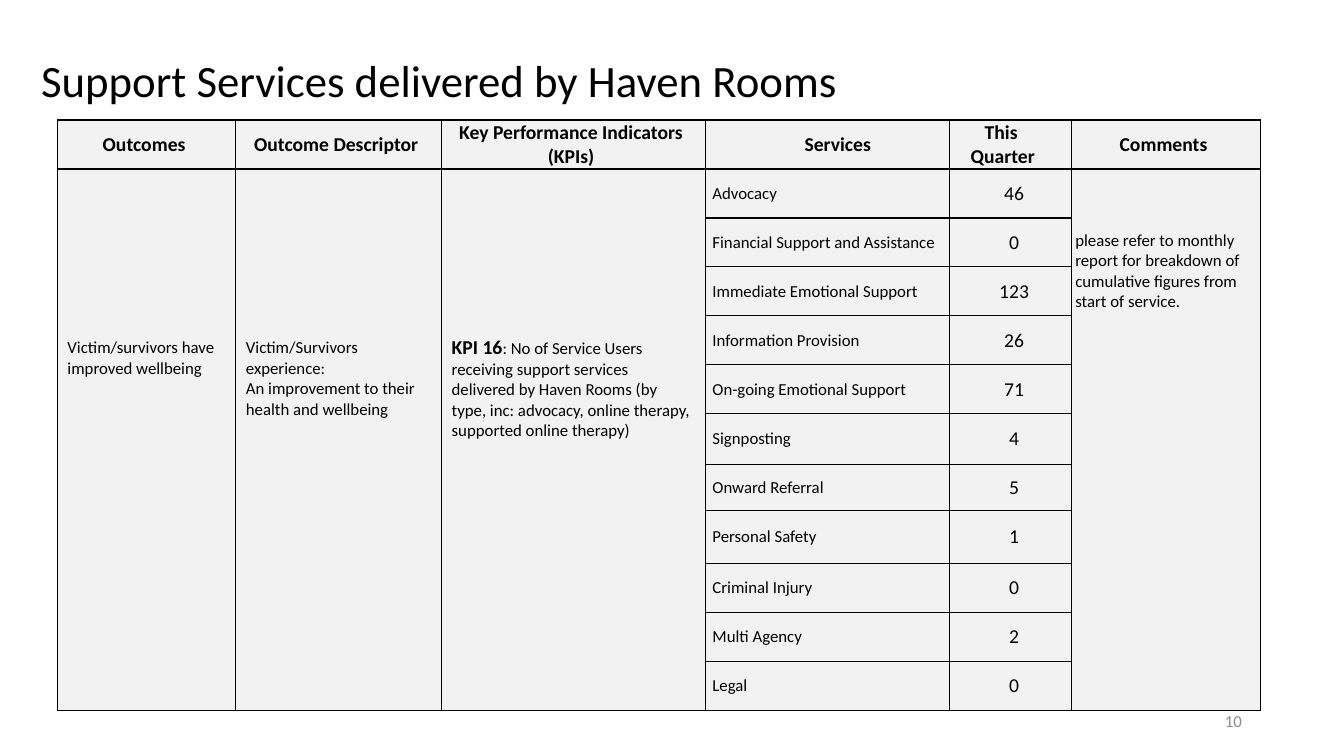
from lxml import etree
from pptx import Presentation
from pptx.dml.color import RGBColor
from pptx.enum.text import MSO_ANCHOR, PP_ALIGN
from pptx.oxml.ns import qn
from pptx.util import Pt

TOP, MIDDLE = MSO_ANCHOR.TOP, MSO_ANCHOR.MIDDLE
LEFT, CENTER, RIGHT = PP_ALIGN.LEFT, PP_ALIGN.CENTER, PP_ALIGN.RIGHT
FONT = "Calibri"
BLACK, GREY, CELL_FILL = "000000", "8C8C8C", "F2F2F2"

COL_WIDTHS = [127.5, 147, 188.5, 174.5, 87, 135]
ROW_HEIGHTS = [35] * 6 + [36, 33, 38] + [35] * 3
HEADERS = ["Outcomes", "Outcome Descriptor", "Key Performance Indicators (KPIs)",
           "Services", "This Quarter", "Comments"]
SERVICES = [
    ("Advocacy", 46),
    ("Financial Support and Assistance", 0),
    ("Immediate Emotional Support", 123),
    ("Information Provision", 26),
    ("On-going Emotional Support", 71),
    ("Signposting", 4),
    ("Onward Referral", 5),
    ("Personal Safety", 1),
    ("Criminal Injury", 0),
    ("Multi Agency", 2),
    ("Legal", 0),
]
# Column: (margins, paragraphs), each paragraph a list of (text, size, bold)
MERGED = {
    0: ((7.2, 120.8, 7.2, 3.6),
        [[("Victim/survivors have improved wellbeing", 12, False)]]),
    1: ((7.2, 120.8, 7.2, 3.6),
        [[("Victim/Survivors experience:", 12, False)],
         [("An improvement to their health and wellbeing", 12, False)]]),
    2: ((7.2, 119, 7.2, 3.6),
        [[("KPI 16", 14, True),
          (": No of Service Users receiving support services delivered by Haven "
           "Rooms (by type, inc: advocacy, online therapy, supported online "
           "therapy)", 12, False)]]),
    5: ((2.7, 44, 5, 0),
        [[(line, 12, False)] for line in (
            "please refer to monthly", "report for breakdown of",
            "cumulative figures from", "start of service.")]),
}


def rgb(color):
    return RGBColor.from_string(color)


def write(tf, paragraphs, align=LEFT, color=BLACK):
    for i, runs in enumerate(paragraphs):
        p = tf.add_paragraph() if i else tf.paragraphs[0]
        p.alignment = align
        for text, size, bold in runs:
            r = p.add_run()
            r.text = text
            r.font.name, r.font.size, r.font.bold = FONT, Pt(size), bold
            r.font.color.rgb = rgb(color)


def add_label(slide, box, text, size, align=LEFT, color=BLACK):
    tf = slide.shapes.add_textbox(*map(Pt, box)).text_frame
    tf.word_wrap = True
    tf.vertical_anchor = MIDDLE
    write(tf, [[(text, size, False)]], align, color)
    return tf


def style_cell(cell):
    """Plain fill with a thin black line on every side."""
    cell.fill.solid()
    cell.fill.fore_color.rgb = rgb(CELL_FILL)
    tcPr = cell._tc.get_or_add_tcPr()
    for i, side in enumerate(("lnL", "lnR", "lnT", "lnB")):
        ln = etree.Element(qn(f"a:{side}"), w=str(Pt(1)))
        fill = etree.SubElement(ln, qn("a:solidFill"))
        etree.SubElement(fill, qn("a:srgbClr"), val=BLACK)
        tcPr.insert(i, ln)


def fill_cell(cell, paragraphs, margins, align=LEFT, anchor=MIDDLE):
    (cell.margin_left, cell.margin_top,
     cell.margin_right, cell.margin_bottom) = map(Pt, margins)
    cell.vertical_anchor = anchor
    write(cell.text_frame, paragraphs, align)


def add_kpi_table(slide, left, top):
    table = slide.shapes.add_table(
        len(ROW_HEIGHTS), len(COL_WIDTHS), Pt(left), Pt(top),
        Pt(sum(COL_WIDTHS)), Pt(sum(ROW_HEIGHTS))).table
    for col, width in zip(table.columns, COL_WIDTHS):
        col.width = Pt(width)
    for row, height in zip(table.rows, ROW_HEIGHTS):
        row.height = Pt(height)
    for cell in table.iter_cells():
        style_cell(cell)

    for c, header in enumerate(HEADERS):
        indented = header in ("Services", "This Quarter")
        margins = (15, 0.5, 0.5, 0) if indented else (0.5, 0.5, 4, 0)
        align = LEFT if header == "This Quarter" else CENTER
        fill_cell(table.cell(0, c), [[(header, 14, True)]], margins, align)
    quarter = table.cell(0, HEADERS.index("This Quarter")).text_frame.paragraphs[0]
    quarter._p.get_or_add_pPr().set("indent", str(Pt(10)))

    for row, (service, count) in enumerate(SERVICES, 1):
        margins = (5, 0, 0, 0)
        fill_cell(table.cell(row, 3), [[(service, 12, False)]], margins)
        fill_cell(table.cell(row, 4), [[(str(count), 14, False)]], margins, CENTER)

    for c, (margins, paragraphs) in MERGED.items():
        table.cell(1, c).merge(table.cell(len(SERVICES), c))
        fill_cell(table.cell(1, c), paragraphs, margins, anchor=TOP)


def main():
    prs = Presentation()
    prs.slide_width, prs.slide_height = Pt(960), Pt(540)
    slide = prs.slides.add_slide(prs.slide_layouts[6])
    title = add_label(slide, (22.3, 33.1, 828, 52.6),
                      "Support Services delivered by Haven Rooms", 32)
    title.paragraphs[0].line_spacing = 0.9
    add_label(slide, (678.2, 500.4, 216, 28.8), "10", 12, RIGHT, GREY)
    add_kpi_table(slide, 41, 85.7)
    prs.save("out.pptx")


if __name__ == "__main__":
    main()
